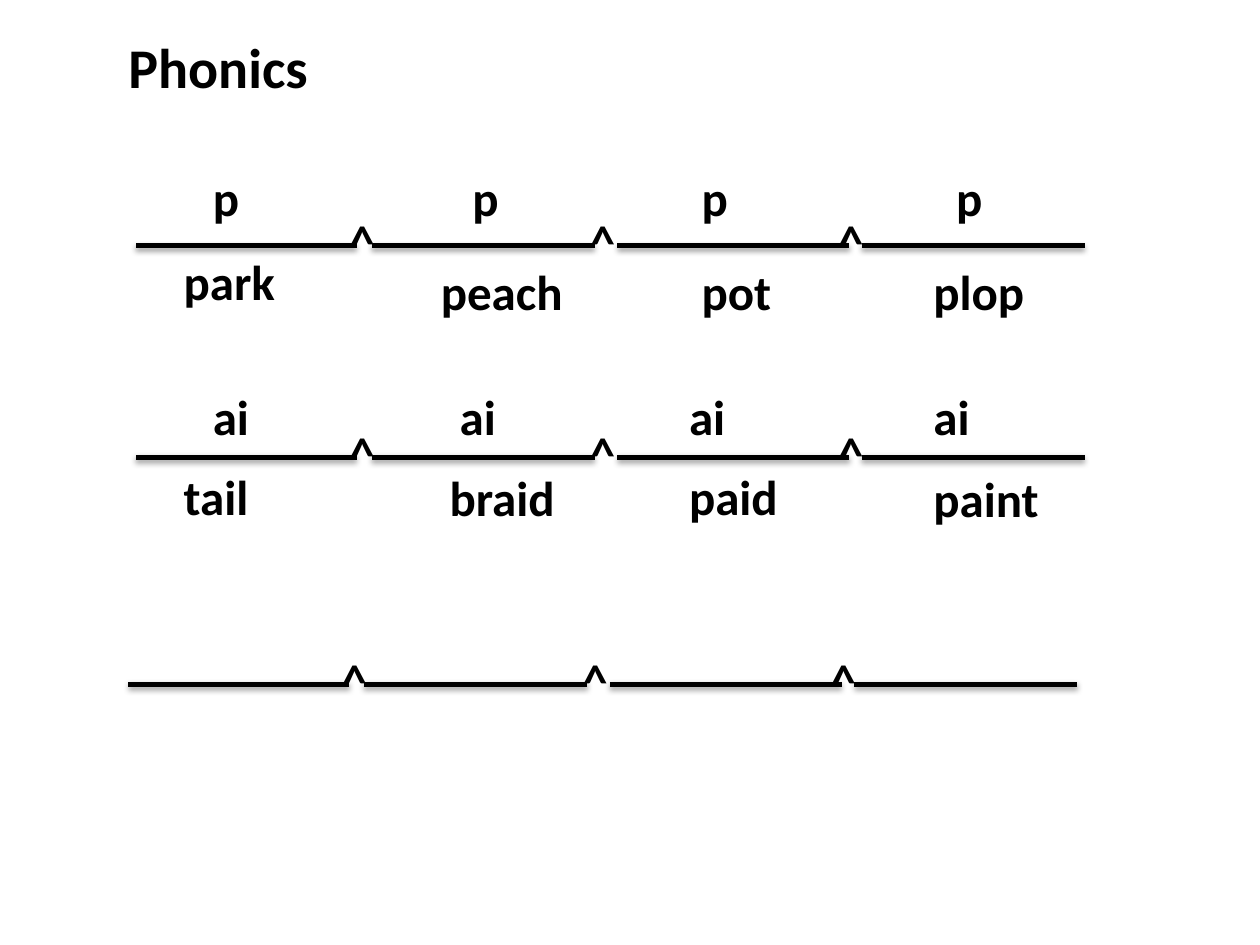
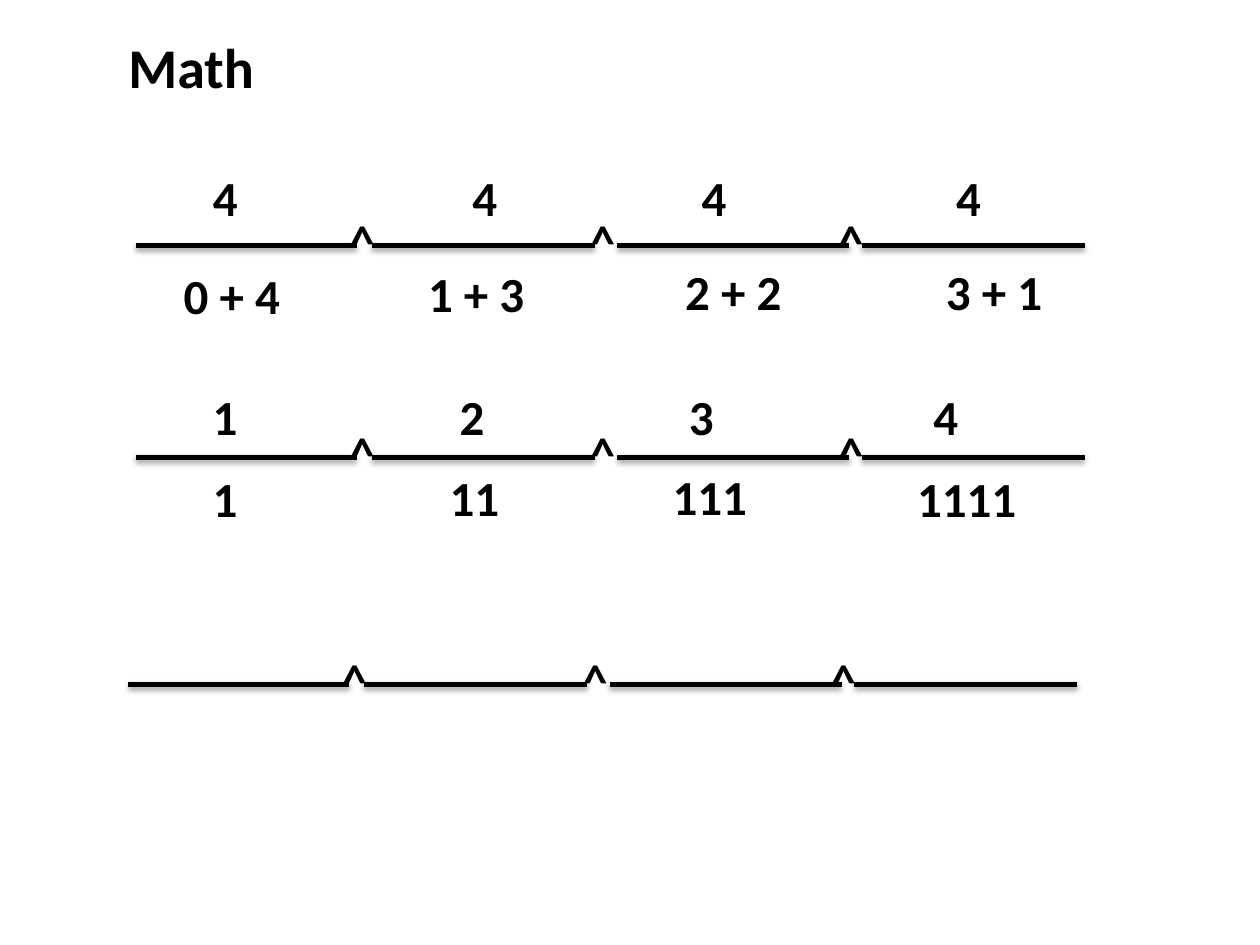
from lxml.etree import SubElement
from pptx import Presentation
from pptx.dml.color import RGBColor
from pptx.enum.shapes import MSO_CONNECTOR as Connector
from pptx.enum.text import MSO_AUTO_SIZE as AutoSize
from pptx.oxml.ns import qn
from pptx.util import Emu, Pt

EMU_PER_PX = 9144
BLACK = RGBColor(0, 0, 0)
WHITE = RGBColor(255, 255, 255)
FONT = "Calibri"
TITLE_SIZE, LABEL_SIZE = 32, 28
LABEL_HEIGHT = 57

TRACKS = [(108, 195), (102, 363 + 180)]
TRACKS.insert(1, (108, 363))
SEGMENTS = [(0, 175), (187, 364), (382, 566), (576, 753)]
CARET_OFFSETS = [160, 351, 548]
CARET_RISE, CARET_WIDTH = 32, 46

FIRST_HEADS = dict(top=128, lefts=[159, 365, 547, 749])
SECOND_HEADS = dict(top=302, lefts=[159, 355, 537, 731])

LESSONS = [
    {
        "title": ("Phonics", 196),
        "first_heads": (["p"] * 4, 45),
        "second_heads": (["ai"] * 4, 55),
        "answers": [
            ("park", 136, 195, 114),
            ("peach", 340, 203, 136),
            ("pot", 547, 203, 89),
            ("plop", 731, 203, 107),
            ("tail", 136, 365, 86),
            ("braid", 347, 366, 124),
            ("paid", 537, 365, 105),
            ("paint", 731, 367, 124),
        ],
    },
    {
        "title": ("Math", 138),
        "first_heads": (["4"] * 4, 45),
        "second_heads": (["1", "2", "3", "4"], 44),
        "answers": [
            ("0 + 4", 136, 206, 116),
            ("1 + 3", 330, 204, 116),
            ("2 + 2", 534, 203, 116),
            ("3 + 1", 741, 203, 116),
            ("1", 159, 367, 44),
            ("11", 347, 366, 67),
            ("111", 524, 365, 90),
            ("1111", 718, 367, 114),
        ],
    },
]


def px(length):
    """Turn px into EMU."""
    return Emu(length * EMU_PER_PX)


def add_label(shapes, text, left, top, width, height=LABEL_HEIGHT, size=LABEL_SIZE):
    """Add a bold, unwrapped line of text."""
    box = shapes.add_textbox(px(left), px(top), px(width), px(height))
    frame = box.text_frame
    frame.word_wrap = False
    frame.auto_size = AutoSize.SHAPE_TO_FIT_TEXT
    frame.text = text
    font = frame.paragraphs[0].runs[0].font
    font.name, font.size, font.bold = FONT, Pt(size), True
    font.color.rgb = BLACK


def add_shadow(connector):
    """Give a connector a soft shadow straight below it."""
    properties = connector._element.spPr
    effects = SubElement(properties, qn("a:effectLst"))
    shadow = SubElement(effects, qn("a:outerShdw"), blurRad="40000",
                        dist="20000", dir="5400000", rotWithShape="0")
    color = SubElement(shadow, qn("a:srgbClr"), val=str(BLACK))
    SubElement(color, qn("a:alpha"), val="38000")


def add_segment(shapes, start, end, y):
    """Add one thick horizontal line."""
    connector = shapes.add_connector(
        Connector.STRAIGHT, px(start), px(y), px(end), px(y))
    connector.line.color.rgb = BLACK
    connector.line.width = Pt(3)
    add_shadow(connector)


def add_track(slide, left, y):
    """Add a grouped line of four segments parted by carets."""
    shapes = slide.shapes.add_group_shape().shapes
    for start, end in SEGMENTS:
        add_segment(shapes, left + start, left + end, y)
    for offset in CARET_OFFSETS:
        add_label(shapes, "^", left + offset, y - CARET_RISE, CARET_WIDTH)


def add_heads(slide, texts, width, top, lefts):
    """Add the row of labels above a track."""
    for text, left in zip(texts, lefts):
        add_label(slide.shapes, text, left, top, width)


def add_lesson(presentation, lesson):
    """Add one lesson slide."""
    slide = presentation.slides.add_slide(presentation.slide_layouts[6])
    slide.background.fill.solid()
    slide.background.fill.fore_color.rgb = WHITE
    for left, y in TRACKS:
        add_track(slide, left, y)
    title, title_width = lesson["title"]
    add_label(slide.shapes, title, 92, 21, title_width, 64, TITLE_SIZE)
    add_heads(slide, *lesson["first_heads"], **FIRST_HEADS)
    add_heads(slide, *lesson["second_heads"], **SECOND_HEADS)
    for answer in lesson["answers"]:
        add_label(slide.shapes, *answer)


def main():
    """Build the lesson slides and save them."""
    presentation = Presentation()
    presentation.slide_width = px(1000)
    presentation.slide_height = px(750)
    for lesson in LESSONS:
        add_lesson(presentation, lesson)
    presentation.save("out.pptx")


if __name__ == "__main__":
    main()
